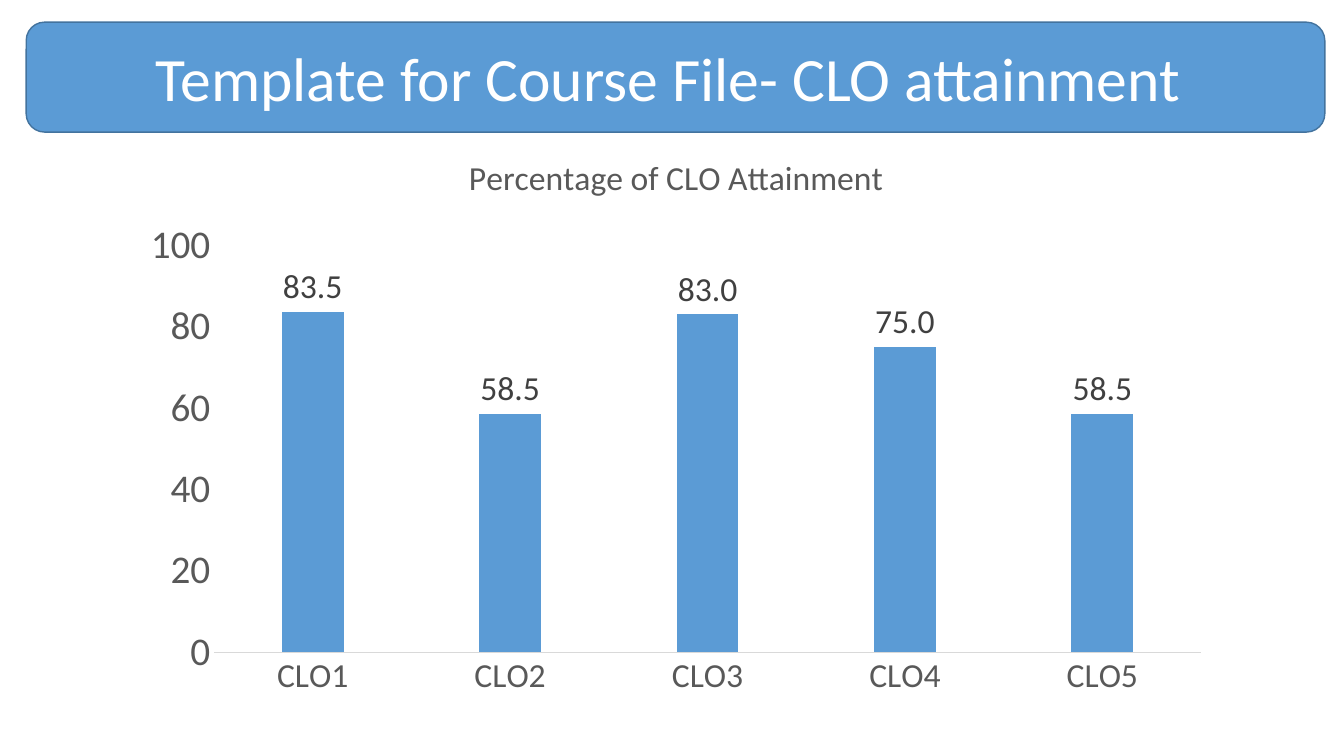
from pptx import Presentation
from pptx.chart.data import CategoryChartData
from pptx.dml.color import RGBColor
from pptx.enum.chart import XL_CHART_TYPE, XL_LABEL_POSITION, XL_TICK_MARK
from pptx.enum.shapes import MSO_SHAPE
from pptx.enum.text import MSO_ANCHOR, PP_ALIGN
from pptx.util import Inches, Pt

HEADING = "Template for Course File- CLO attainment "
CHART_TITLE = "Percentage of CLO Attainment"
ATTAINMENT = {"CLO1": 83.5, "CLO2": 58.5, "CLO3": 83, "CLO4": 75, "CLO5": 58.5}

FONT = "Calibri"
BLUE = RGBColor(0x5B, 0x9B, 0xD5)
DARK_BLUE = RGBColor(0x43, 0x73, 0x9E)
WHITE = RGBColor(0xFF, 0xFF, 0xFF)
GREY = RGBColor(0x59, 0x59, 0x59)
DARK_GREY = RGBColor(0x40, 0x40, 0x40)
LIGHT_GREY = RGBColor(0xD9, 0xD9, 0xD9)


def style_font(font, size, color):
    font.name = FONT
    font.size = Pt(size)
    font.bold = False
    font.color.rgb = color


def add_banner(page):
    box = page.shapes.add_shape(MSO_SHAPE.ROUNDED_RECTANGLE, Inches(0.26), Inches(0.22),
                                Inches(12.88), Inches(1.09))
    box.shadow.inherit = False
    box.fill.solid()
    box.fill.fore_color.rgb = BLUE
    box.line.color.rgb = DARK_BLUE
    box.line.width = Pt(1)
    box.text_frame.word_wrap = True
    box.text_frame.vertical_anchor = MSO_ANCHOR.MIDDLE
    para = box.text_frame.paragraphs[0]
    para.alignment = PP_ALIGN.CENTER
    span = para.add_run()
    span.text = HEADING
    style_font(span.font, 44, WHITE)


def style_axes(chart):
    for axis, size in ((chart.category_axis, 24), (chart.value_axis, 28)):
        axis.major_tick_mark = XL_TICK_MARK.NONE
        axis.minor_tick_mark = XL_TICK_MARK.NONE
        axis.has_major_gridlines = False
        style_font(axis.tick_labels.font, size, GREY)
    chart.category_axis.format.line.color.rgb = LIGHT_GREY
    chart.category_axis.format.line.width = Pt(0.75)
    values = chart.value_axis
    values.format.line.fill.background()
    values.minimum_scale, values.maximum_scale, values.major_unit = 0, 100, 20
    values.tick_labels.number_format = "0"
    values.tick_labels.number_format_is_linked = False


def add_attainment_chart(page):
    data = CategoryChartData()
    data.categories = list(ATTAINMENT)
    data.add_series("Series 1", list(ATTAINMENT.values()))
    chart = page.shapes.add_chart(XL_CHART_TYPE.COLUMN_CLUSTERED, Inches(1.28), Inches(1.31),
                                  Inches(10.85), Inches(5.72), data).chart
    chart.has_legend = False
    chart.has_title = True
    span = chart.chart_title.text_frame.paragraphs[0].add_run()
    span.text = CHART_TITLE
    style_font(span.font, 24, GREY)
    chart.chart_title.include_in_layout = False
    style_axes(chart)

    plot = chart.plots[0]
    plot.gap_width = 219
    plot.overlap = -27
    plot.vary_by_categories = False
    bars = plot.series[0]
    bars.format.fill.solid()
    bars.format.fill.fore_color.rgb = BLUE
    labels = bars.data_labels
    labels.show_value = True
    labels.position = XL_LABEL_POSITION.OUTSIDE_END
    labels.number_format = "0.0"
    labels.number_format_is_linked = False
    style_font(labels.font, 24, DARK_GREY)


def main():
    deck = Presentation()
    deck.slide_width = Inches(13.33)
    deck.slide_height = Inches(7.5)
    page = deck.slides.add_slide(deck.slide_layouts[6])
    add_banner(page)
    add_attainment_chart(page)
    deck.save("out.pptx")


if __name__ == "__main__":
    main()
